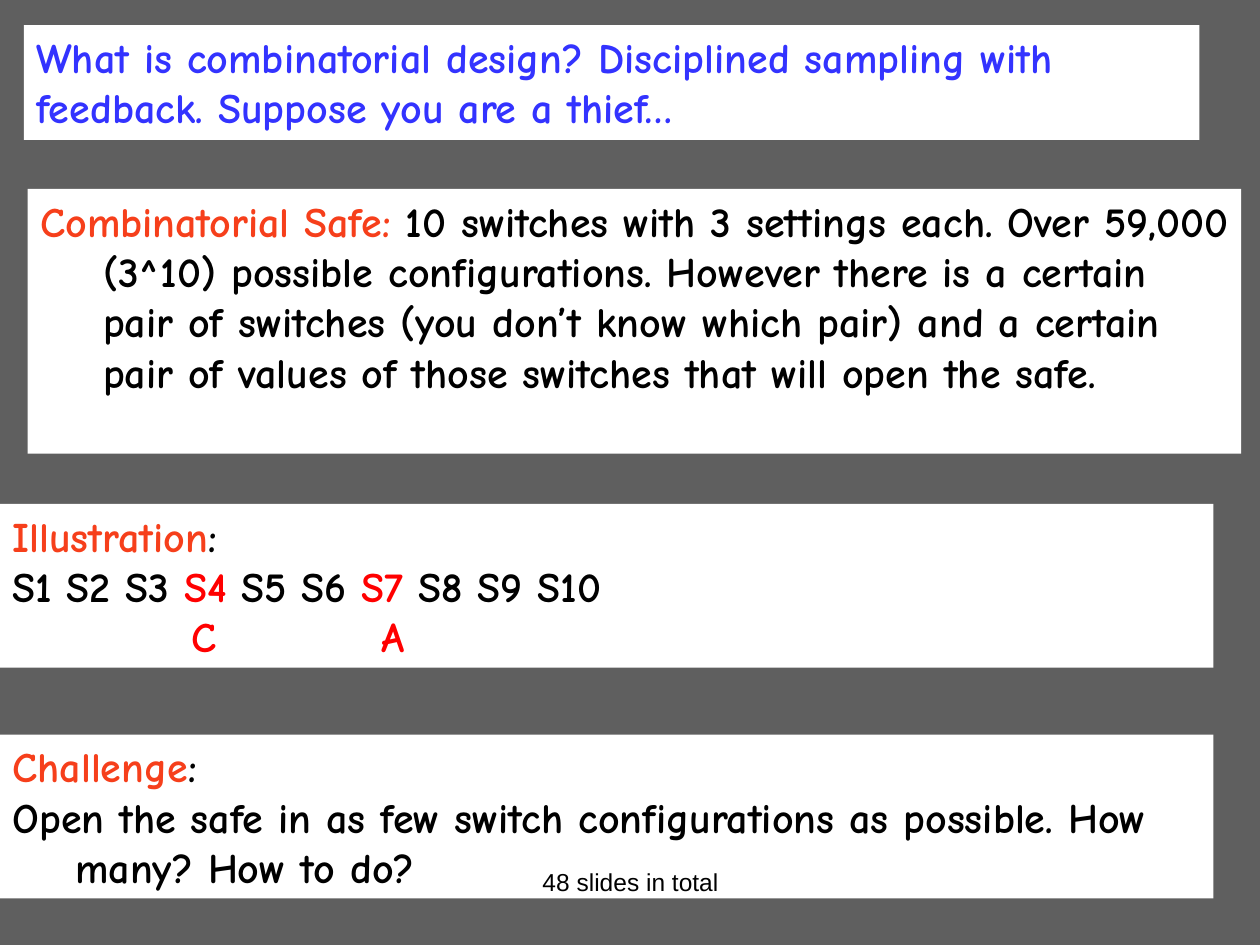
from lxml import etree
from pptx import Presentation
from pptx import util as u
from pptx.dml.color import RGBColor
from pptx.enum import shapes, text
from pptx.oxml import ns

WIDTH, HEIGHT = u.Inches(10), u.Inches(7.5)
GREY = RGBColor(0x5F, 0x5F, 0x5F)
WHITE = RGBColor(0xFF, 0xFF, 0xFF)
BLACK = RGBColor(0, 0, 0)
BLUE = RGBColor(0x33, 0x33, 0xFF)
ORANGE = RGBColor(0xF6, 0x3F, 0x1B)
RED = RGBColor(0xFF, 0, 0)
HANG = 0.05
TABS = (0.152, 0.302)


def place(left, top, width, height):
    return (int(WIDTH * left / 100), int(HEIGHT * top / 100),
            int(WIDTH * width / 100), int(HEIGHT * height / 100))


def add_runs(p, runs, font="Comic Neue", size=24, bold=True,
             align=text.PP_ALIGN.LEFT, hang=0, tabs=()):
    p.alignment = align
    pPr = p._p.get_or_add_pPr()
    if hang:
        pPr.set("marL", str(int(WIDTH * hang)))
        pPr.set("indent", str(-int(WIDTH * hang)))
    if tabs:
        stops = etree.SubElement(pPr, ns.qn("a:tabLst"))
        for pos in tabs:
            etree.SubElement(stops, ns.qn("a:tab"), pos=str(int(WIDTH * pos)), algn="ctr")
    for words, color in runs:
        r = p.add_run()
        r.text = words
        r.font.name, r.font.size, r.font.bold = font, u.Pt(size), bold
        r.font.color.rgb = color


def fill_frame(tf, paragraphs):
    tf.word_wrap = True
    tf.vertical_anchor = text.MSO_ANCHOR.TOP
    for i, (runs, style) in enumerate(paragraphs):
        p = tf.add_paragraph() if i else tf.paragraphs[0]
        add_runs(p, runs, **style)


def add_panel(s, box, paragraphs):
    sp = s.shapes.add_shape(shapes.MSO_SHAPE.RECTANGLE, *place(*box))
    sp.shadow.inherit = False
    sp.fill.solid()
    sp.fill.fore_color.rgb = WHITE
    sp.line.fill.background()
    fill_frame(sp.text_frame, paragraphs)


def add_footer(s, box, words):
    style = dict(font="Arial", size=14, bold=False, align=text.PP_ALIGN.CENTER)
    sp = s.shapes.add_textbox(*place(*box))
    fill_frame(sp.text_frame, [([(words, BLACK)], style)])


def main():
    prs = Presentation()
    prs.slide_width, prs.slide_height = WIDTH, HEIGHT
    s = prs.slides.add_slide(prs.slide_layouts[6])
    s.background.fill.solid()
    s.background.fill.fore_color.rgb = GREY
    hanging = dict(hang=HANG)

    add_panel(s, (1.9, 2.67, 93.3, 12.13), [
        ([("What is combinatorial design? Disciplined sampling with feedback. "
           "Suppose you are a thief…", BLUE)], {}),
    ])
    add_panel(s, (2.2, 20, 96.3, 28), [
        ([("Combinatorial Safe:", ORANGE),
          (" 10 switches with 3 settings each. Over 59,000 (3^10) possible "
           "configurations. However there is a certain pair of switches (you "
           "don’t know which pair) and a certain pair of values of those "
           "switches that will open the safe.", BLACK)], hanging),
    ])
    add_panel(s, (0, 53.33, 96.3, 17.33), [
        ([("Illustration", ORANGE), (":", BLACK)], hanging),
        ([("S1 S2 S3 ", BLACK), ("S4", RED), (" S5 S6 ", BLACK),
          ("S7", RED), (" S8 S9 S10", BLACK)], hanging),
        ([("\tC\tA", RED)], dict(tabs=TABS)),
    ])
    add_panel(s, (0, 77.73, 96.3, 17.33), [
        ([("Challenge", ORANGE), (":", BLACK)], hanging),
        ([("Open the safe in as few switch configurations as possible. "
           "How many? How to do?", BLACK)], hanging),
    ])
    add_footer(s, (34.2, 91.07, 31.7, 6.93), "48 slides in total")
    prs.save("out.pptx")


if __name__ == "__main__":
    main()
